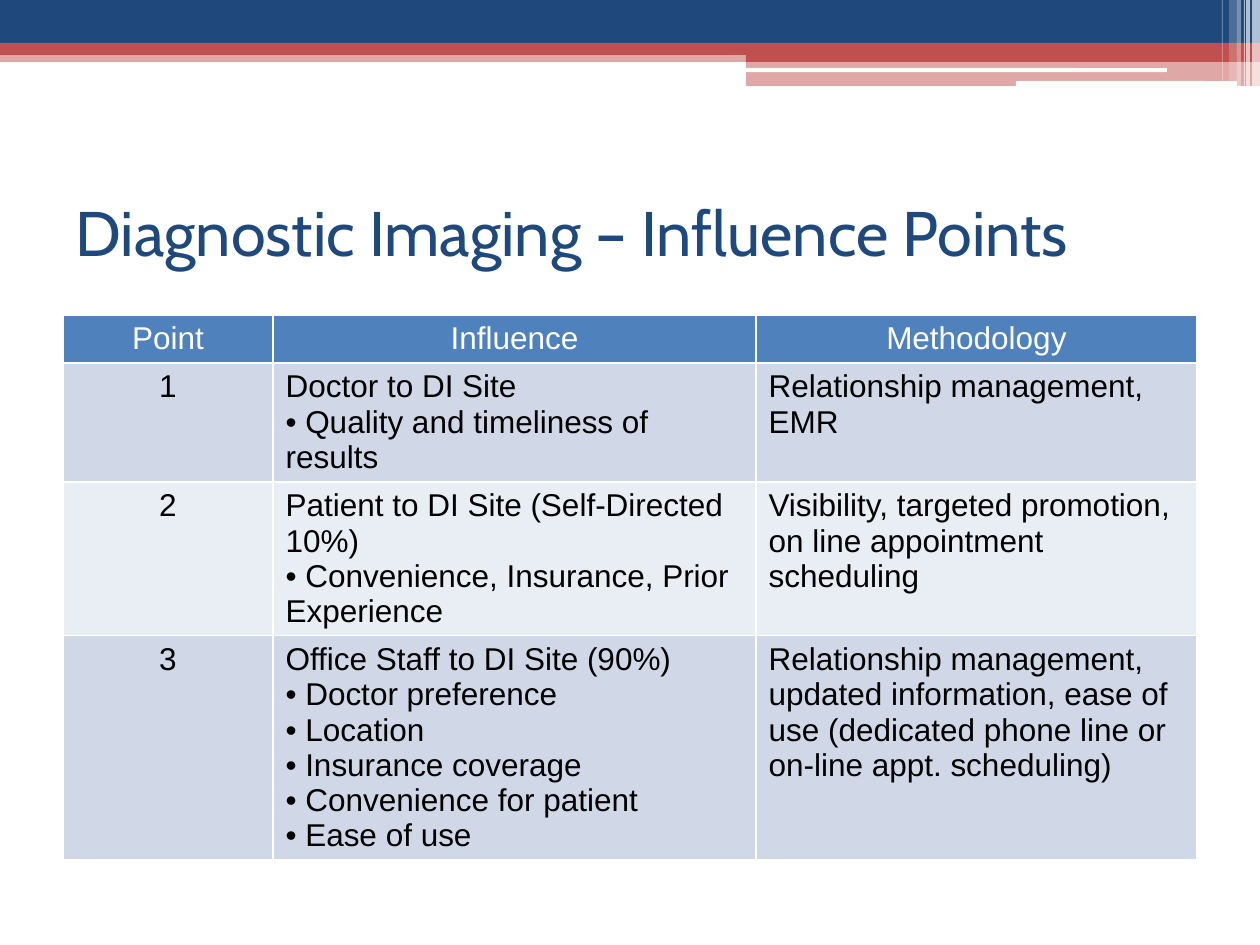
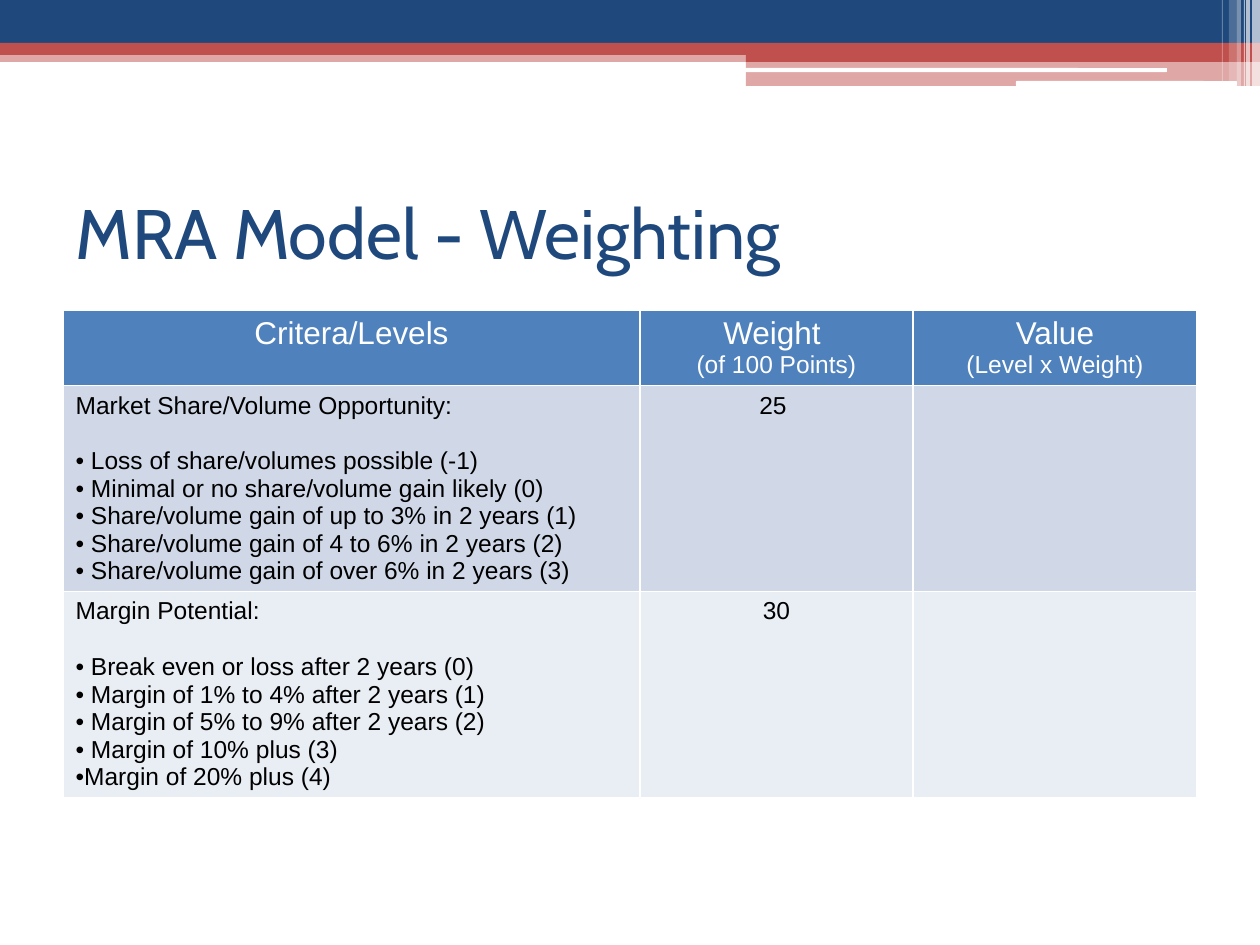
"""Build two table slides on diagnostic imaging influence and model weighting."""
from lxml import etree
from pptx import Presentation
from pptx import util as u
from pptx.dml.color import RGBColor
from pptx.enum import shapes, text
from pptx.oxml import ns

NAVY = RGBColor(0x1F, 0x49, 0x7D)
RED = RGBColor(0xC0, 0x50, 0x4D)
BLUE = RGBColor(0x4F, 0x81, 0xBD)
ROW_DARK = RGBColor(0xD0, 0xD8, 0xE8)
ROW_LIGHT = RGBColor(0xE9, 0xED, 0xF4)
WHITE = RGBColor(0xFF, 0xFF, 0xFF)
BLACK = RGBColor(0, 0, 0)
EMU_PER_PX = 914400 / 126
RECT = shapes.MSO_SHAPE.RECTANGLE
ROUNDED = shapes.MSO_SHAPE.ROUNDED_RECTANGLE
BULLET = "•"

BANDS = [
    (RECT, 0, 50, 1260, 12, RED, 50),
    (RECT, 0, 0, 1260, 43, NAVY, 100),
    (RECT, 0, 43, 1260, 12, RED, 100),
    (RECT, 746, 49, 514, 13, RED, 100),
    (RECT, 746, 62, 514, 24, RED, 50),
    (ROUNDED, 745, 68, 422, 4, WHITE, 100),
    (ROUNDED, 1016, 81, 221, 5, WHITE, 100),
]
STRIPES = [
    (1252, 8, 86, 65), (1246, 4, 86, 65), (1244, 1, 86, 60),
    (1237, 4, 86, 40), (1229, 8, 81, 20), (1222, 1, 81, 30),
]

INFLUENCE = [
    ["Point", "Influence", "Methodology"],
    ["1", "Doctor to DI Site\n• Quality and timeliness of results",
     "Relationship management, EMR"],
    ["2", "Patient to DI Site (Self-Directed 10%)\n"
          "• Convenience, Insurance, Prior Experience",
     "Visibility, targeted promotion, on line appointment scheduling"],
    ["3", "Office Staff to DI Site (90%)\n• Doctor preference\n• Location\n"
          "• Insurance coverage\n• Convenience for patient\n• Ease of use",
     "Relationship management, updated information, ease of use "
     "(dedicated phone line or on-line appt. scheduling)"],
]
WEIGHTING = [
    ["Critera/Levels", "Weight \n(of 100 Points)", "Value\n(Level x Weight)"],
    ["Market Share/Volume Opportunity:\n"
     "• Loss of share/volumes possible (-1)\n"
     "• Minimal or no share/volume gain likely (0)\n"
     "• Share/volume gain of up to 3% in 2 years (1)\n"
     "• Share/volume gain of 4 to 6% in 2 years (2)\n"
     "• Share/volume gain of over 6% in 2 years (3)", "25 ", ""],
    ["Margin Potential:\n"
     "• Break even or loss after 2 years (0)\n"
     "• Margin of 1% to 4% after 2 years (1)\n"
     "• Margin of 5% to 9% after 2 years (2)\n"
     "• Margin of 10% plus (3)\n"
     "•Margin of 20% plus (4)", "30", ""],
]


def px(length):
    """Turn px into EMU."""
    return u.Emu(round(length * EMU_PER_PX))


class Deck:
    """Hold the shared style and the current page."""

    def __init__(self):
        self.deck = Presentation()
        self.deck.slide_width, self.deck.slide_height = px(1260), px(945)
        self.page = None

    def add_page(self, title, size):
        """Start a page with its bands and title."""
        self.page = self.deck.slides.add_slide(self.deck.slide_layouts[5])
        for band in BANDS:
            self.band(*band)
        for left, width, height, opacity in STRIPES:
            self.band(RECT, left, 0, width, height, WHITE, opacity)
        self.title(title, size)

    def band(self, kind, left, top, width, height, color, opacity):
        """Draw one plain block of the header."""
        box = self.page.shapes.add_shape(kind, px(left), px(top), px(width), px(height))
        box.shadow.inherit = False
        box.line.fill.background()
        box.fill.solid()
        box.fill.fore_color.rgb = color
        if opacity < 100:
            shade = box.fill._xPr.find(".//" + ns.qn("a:srgbClr"))
            etree.SubElement(shade, ns.qn("a:alpha"), val=str(opacity * 1000))

    def title(self, wording, size):
        """Place and format the title placeholder."""
        box = self.page.shapes.title
        box.left, box.top, box.width, box.height = px(63), px(158), px(1134), px(147)
        frame = box.text_frame
        frame.text = wording
        frame.auto_size = text.MSO_AUTO_SIZE.NONE
        frame.vertical_anchor = text.MSO_ANCHOR.MIDDLE
        frame.paragraphs[0].alignment = text.PP_ALIGN.LEFT
        self.style(frame.paragraphs[0], "Cabin", size, NAVY)

    def style(self, para, font, size, color):
        """Format every run of a paragraph."""
        for span in para.runs:
            span.font.name = font
            span.font.size = u.Pt(size)
            span.font.bold = False
            span.font.color.rgb = color

    def table(self, rows, top, widths, heights, centered, size, list_gap=0):
        """Add a banded table with a header row of 18 pt."""
        frame = self.page.shapes.add_table(
            len(rows), len(widths), px(63), px(top), px(sum(widths)), px(sum(heights)))
        grid = frame.table
        for column, width in zip(grid.columns, widths):
            column.width = px(width)
        for row, height in zip(grid.rows, heights):
            row.height = px(height)
        for r, row in enumerate(rows):
            fill = BLUE if r == 0 else (ROW_LIGHT, ROW_DARK)[r % 2]
            for c, wording in enumerate(row):
                cell = grid.cell(r, c)
                cell.fill.solid()
                cell.fill.fore_color.rgb = fill
                self.borders(cell)
                cell.text_frame.text = wording
                for i, para in enumerate(cell.text_frame.paragraphs):
                    if r == 0 or c == centered:
                        para.alignment = text.PP_ALIGN.CENTER
                    if para.text.startswith(BULLET):
                        self.bullet(para)
                        para.space_before = u.Pt(list_gap if i == 1 else 0)
                    self.style(para, "Arial", 18 if r == 0 and i == 0 else size,
                               WHITE if r == 0 else BLACK)

    def bullet(self, para):
        """Turn a leading bullet sign into a real bullet."""
        para.text = para.text.removeprefix(BULLET)
        props = para._p.get_or_add_pPr()
        props.set("marL", "0")
        props.set("indent", "0")
        etree.SubElement(props, ns.qn("a:buFont"), typeface="Arial")
        etree.SubElement(props, ns.qn("a:buChar"), char=BULLET)

    def borders(self, cell):
        """Give a cell thin white lines on all sides."""
        props = cell._tc.get_or_add_tcPr()
        for place, side in enumerate(("lnL", "lnR", "lnT", "lnB")):
            line = etree.Element(ns.qn("a:" + side), w=str(u.Pt(1)))
            fill = etree.SubElement(line, ns.qn("a:solidFill"))
            etree.SubElement(fill, ns.qn("a:srgbClr"), val=str(WHITE))
            props.insert(place, line)


def main():
    """Build both pages and save them."""
    deck = Deck()
    deck.add_page("Diagnostic Imaging – Influence Points", 36)
    deck.table(INFLUENCE, 315, (210, 483, 441), (48, 119, 153, 224), centered=0, size=18)
    deck.add_page("MRA Model - Weighting", 40)
    deck.table(WEIGHTING, 310, (577, 273, 284), (75, 206, 206), centered=1, size=14,
               list_gap=16)
    deck.deck.save("out.pptx")


if __name__ == "__main__":
    main()
